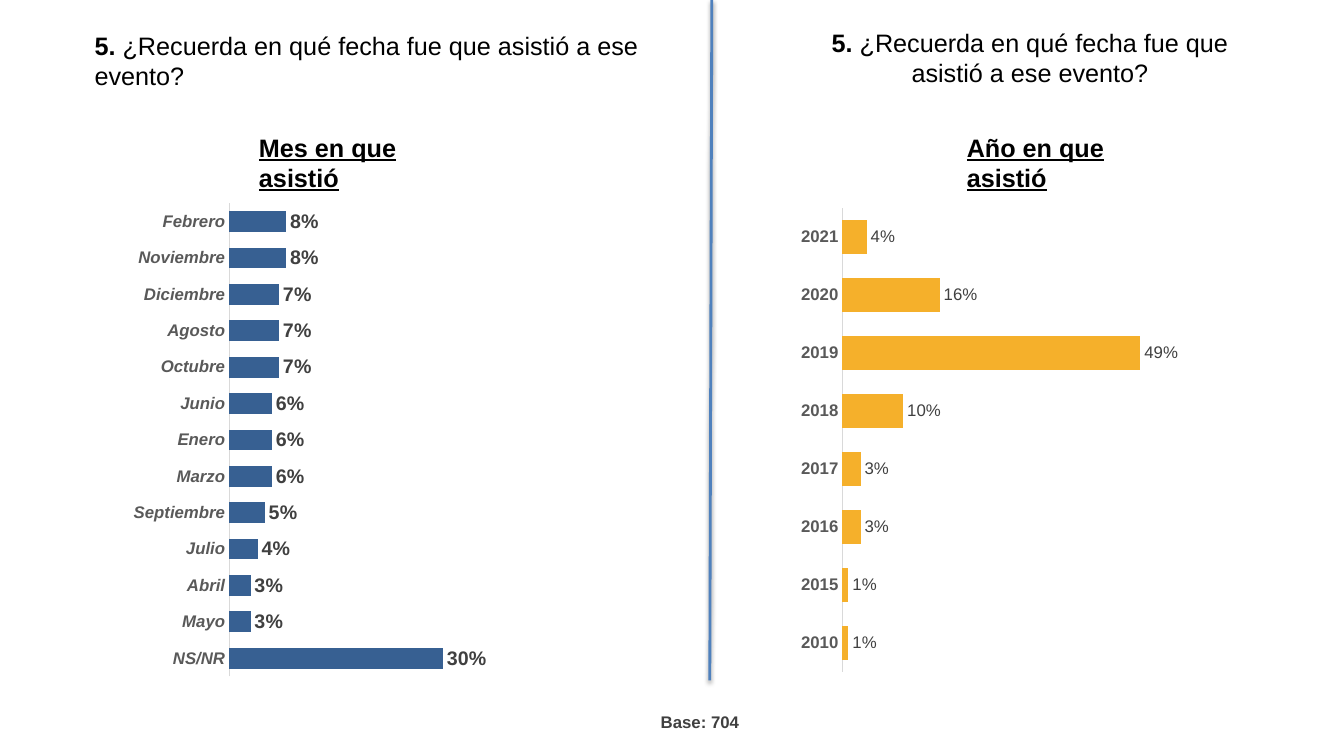
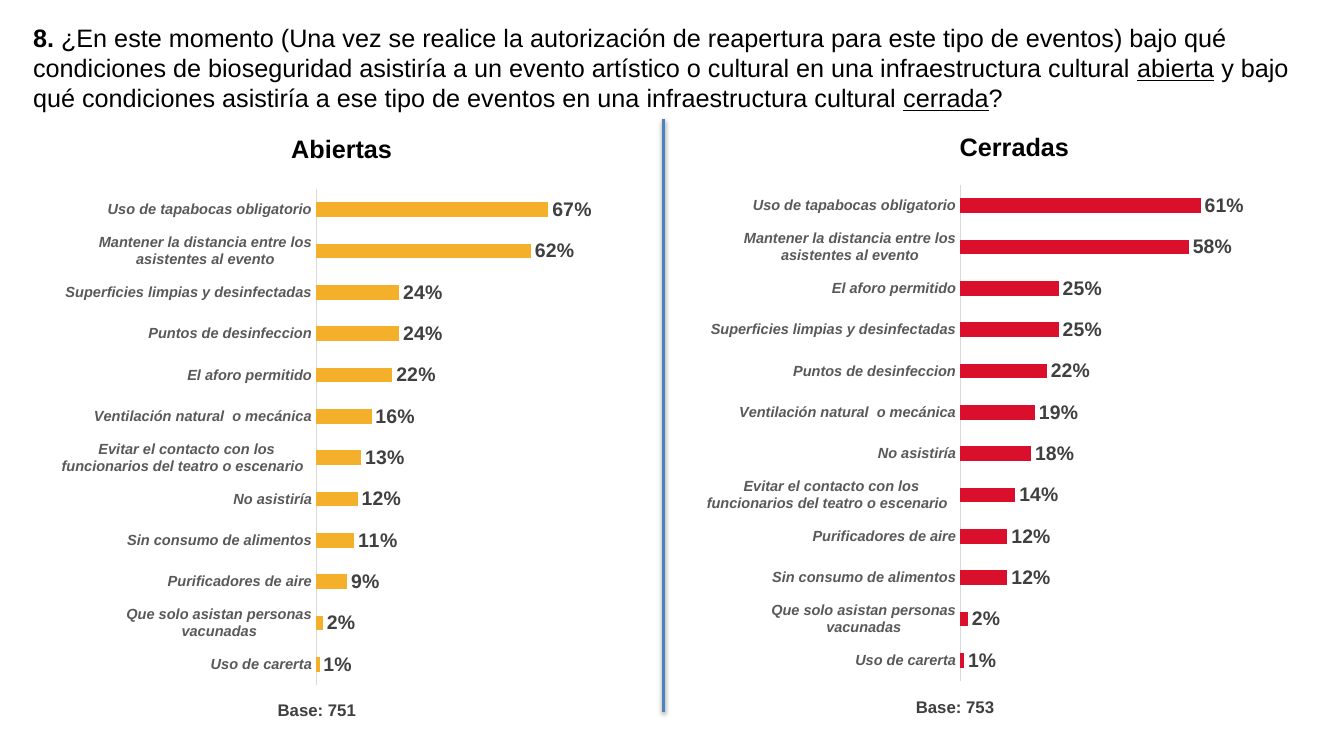
from lxml import etree
from pptx import Presentation
from pptx.chart.data import CategoryChartData
from pptx.dml.color import RGBColor
from pptx.enum.chart import XL_CHART_TYPE, XL_LABEL_POSITION, XL_TICK_MARK
from pptx.enum.shapes import MSO_CONNECTOR
from pptx.enum.text import MSO_AUTO_SIZE, PP_ALIGN
from pptx.oxml import parse_xml
from pptx.oxml.ns import nsdecls, qn
from pptx.util import Pt

BAR_CLUSTERED = XL_CHART_TYPE.BAR_CLUSTERED
OUTSIDE_END = XL_LABEL_POSITION.OUTSIDE_END
NO_TICK = XL_TICK_MARK.NONE
STRAIGHT = MSO_CONNECTOR.STRAIGHT
GROW = MSO_AUTO_SIZE.SHAPE_TO_FIT_TEXT
LEFT, CENTER, RIGHT = PP_ALIGN.LEFT, PP_ALIGN.CENTER, PP_ALIGN.RIGHT

EMU_PER_PX = 9144
WIDTH, HEIGHT = 1333, 750

BLACK = RGBColor(0x00, 0x00, 0x00)
BASE_GRAY = RGBColor(0x3F, 0x3F, 0x3F)
VALUE_GRAY = RGBColor(0x40, 0x40, 0x40)
CATEGORY_GRAY = RGBColor(0x59, 0x59, 0x59)
AXIS_GRAY = RGBColor(0xD9, 0xD9, 0xD9)
DIVIDER_BLUE = RGBColor(0x4F, 0x81, 0xBD)
BLUE = RGBColor(0x37, 0x60, 0x92)
AMBER = RGBColor(0xF5, 0xB0, 0x2B)
RED = RGBColor(0xDA, 0x0F, 0x2B)

DATE_QUESTION = [("5.", "b"), (" ¿Recuerda en qué fecha fue que asistió a ese evento?", "")]
CONDITIONS_QUESTION = [
    ("8.", "b"),
    (" ¿En este momento (Una vez se realice la autorización de reapertura para este tipo "
     "de eventos) bajo qué condiciones de bioseguridad asistiría a un evento artístico o "
     "cultural en una infraestructura cultural ", ""),
    ("abierta", "u"),
    (" y bajo qué condiciones asistiría a ese tipo de eventos en una infraestructura "
     "cultural ", ""),
    ("cerrada", "u"),
    ("?", ""),
]

# Percentages, listed from the bottom bar to the top one
MONTHS = {
    "NS/NR": 30, "Mayo": 3, "Abril": 3, "Julio": 4, "Septiembre": 5, "Marzo": 6,
    "Enero": 6, "Junio": 6, "Octubre": 7, "Agosto": 7, "Diciembre": 7,
    "Noviembre": 8, "Febrero": 8,
}
YEARS = {
    "2010": 1, "2015": 1, "2016": 3, "2017": 3,
    "2018": 10, "2019": 49, "2020": 16, "2021": 4,
}
# Condition: percentage for open venues, percentage for closed venues
CONDITIONS = {
    "Uso de carerta": (1, 1),
    "Que solo asistan personas vacunadas": (2, 2),
    "Sin consumo de alimentos": (11, 12),
    "Purificadores de aire": (9, 12),
    "Evitar el contacto con los funcionarios del teatro o escenario  ": (13, 14),
    "No asistiría": (12, 18),
    "Ventilación natural  o mecánica": (16, 19),
    "Puntos de desinfeccion": (24, 22),
    "Superficies limpias y desinfectadas": (24, 25),
    "El aforo permitido": (22, 25),
    "Mantener la distancia entre los asistentes al evento": (62, 58),
    "Uso de tapabocas obligatorio": (67, 61),
}


def px(*lengths):
    return [length * EMU_PER_PX for length in lengths]


def ranked_conditions(venue):
    """Percentages of one venue column, in ascending order."""
    values = {condition: pair[venue] for condition, pair in CONDITIONS.items()}
    return dict(sorted(values.items(), key=lambda item: item[1]))


class Deck:
    font_name = "Arial"

    def __init__(self):
        self.presentation = Presentation()
        self.presentation.slide_width, self.presentation.slide_height = px(WIDTH, HEIGHT)
        self.slide = None

    def new_slide(self):
        self.slide = self.presentation.slides.add_slide(self.presentation.slide_layouts[6])

    def style(self, font, size, color, bold=False, italic=False):
        font.name, font.size = self.font_name, Pt(size)
        font.color.rgb = color
        font.bold, font.italic = bold, italic

    def text(self, box, runs, size=18, color=BLACK, align=LEFT, spacing=None):
        """Runs are (text, marks) pairs, where marks may hold b and u."""
        frame = self.slide.shapes.add_textbox(*px(*box)).text_frame
        frame.word_wrap = True
        frame.auto_size = GROW
        paragraph = frame.paragraphs[0]
        paragraph.alignment = align
        paragraph.line_spacing = spacing
        self.style(paragraph.font, size, color)
        for content, marks in runs:
            run = paragraph.add_run()
            run.text = content
            run.font.bold = "b" in marks
            run.font.underline = "u" in marks

    def heading(self, left, top, width, content, marks="b"):
        self.text((left, top, width, 40), [(content, marks)])

    def base(self, left, top, count):
        self.text((left, top, 130, 25), [(f"Base: {count}", "b")],
                  size=12, color=BASE_GRAY, align=RIGHT, spacing=0.83)

    def divider(self, start, end):
        line = self.slide.shapes.add_connector(STRAIGHT, *px(*start, *end))
        line.line.color.rgb = DIVIDER_BLUE
        line.line.width = Pt(2)
        effects = etree.SubElement(line._element.spPr, qn("a:effectLst"))
        effects.append(parse_xml(
            f'<a:outerShdw {nsdecls("a")} blurRad="40000" dist="20000" dir="5400000" '
            'rotWithShape="0"><a:srgbClr val="000000"><a:alpha val="38000"/></a:srgbClr>'
            '</a:outerShdw>'))

    def bar_chart(self, box, values, color, maximum, gap, plot, category_size=12,
                  category_italic=True, value_size=14, value_bold=True):
        data = CategoryChartData(number_format="0%")
        data.categories = list(values)
        data.add_series("Porcentaje", [value / 100 for value in values.values()])
        chart = self.slide.shapes.add_chart(BAR_CLUSTERED, *px(*box), data).chart
        chart.has_legend = False
        chart.has_title = False
        self.style(chart.font, 10, BLACK)

        categories = chart.category_axis
        categories.major_tick_mark = categories.minor_tick_mark = NO_TICK
        categories.format.line.color.rgb = AXIS_GRAY
        categories.format.line.width = Pt(0.75)
        self.style(categories.tick_labels.font, category_size, CATEGORY_GRAY,
                   bold=True, italic=category_italic)

        scale = chart.value_axis
        scale.visible = False
        scale.has_major_gridlines = False
        scale.minimum_scale, scale.maximum_scale = 0, maximum

        bars = chart.plots[0]
        bars.gap_width = gap
        bars.vary_by_categories = False
        fill = bars.series[0].format.fill
        fill.solid()
        fill.fore_color.rgb = color
        bars.has_data_labels = True
        labels = bars.data_labels
        labels.show_value = True
        labels.position = OUTSIDE_END
        labels.number_format, labels.number_format_is_linked = "0%", False
        self.style(labels.font, value_size, VALUE_GRAY, bold=value_bold)
        self.place_plot(chart, plot)

    def place_plot(self, chart, plot):
        """Fix the inner plot area, given as fractions x, y, w, h of the chart."""
        area = chart._chartSpace.chart.plotArea
        for old_layout in area.findall(qn("c:layout")):
            area.remove(old_layout)
        sizes = "".join(f'<c:{name} val="{value}"/>' for name, value in zip("xywh", plot))
        area.insert(0, parse_xml(
            f'<c:layout {nsdecls("c")}><c:manualLayout><c:layoutTarget val="inner"/>'
            f'<c:xMode val="edge"/><c:yMode val="edge"/>{sizes}</c:manualLayout></c:layout>'))


def add_date_slide(deck):
    deck.new_slide()
    deck.text((84, 25, 594, 40), DATE_QUESTION)
    deck.text((796, 22, 451, 71), DATE_QUESTION, align=CENTER)
    deck.bar_chart((130, 197, 512, 479), MONTHS, BLUE, maximum=0.5, gap=75,
                   plot=(0.19, 0.01, 0.69, 0.98))
    deck.bar_chart((785, 197, 421, 479), YEARS, AMBER, maximum=0.6, gap=70,
                   plot=(0.12, 0.02, 0.86, 0.96), category_italic=False,
                   value_size=12, value_bold=False)
    deck.base(613, 705, 704)
    deck.divider((706, 0), (704, 675))
    deck.heading(247, 126, 215, "Mes en que asistió", "bu")
    deck.heading(949, 126, 212, "Año en que asistió", "bu")


def add_conditions_slide(deck):
    deck.new_slide()
    deck.text((23, 17, 1310, 101), CONDITIONS_QUESTION)
    deck.heading(279, 127, 245, "Abiertas")
    deck.heading(942, 125, 245, "Cerradas")
    deck.divider((658, 118), (658, 706))
    venues = [(61, 172, AMBER, 0.8), (701, 168, RED, 0.7)]
    for venue, (left, top, color, maximum) in enumerate(venues):
        deck.bar_chart((left, top, 533, 518), ranked_conditions(venue), color, maximum,
                       gap=182, plot=(0.47, 0.03, 0.52, 0.95), category_size=10.5)
    deck.base(233, 693, 751)
    deck.base(866, 690, 753)


def main():
    deck = Deck()
    add_date_slide(deck)
    add_conditions_slide(deck)
    deck.presentation.save("out.pptx")


if __name__ == "__main__":
    main()
